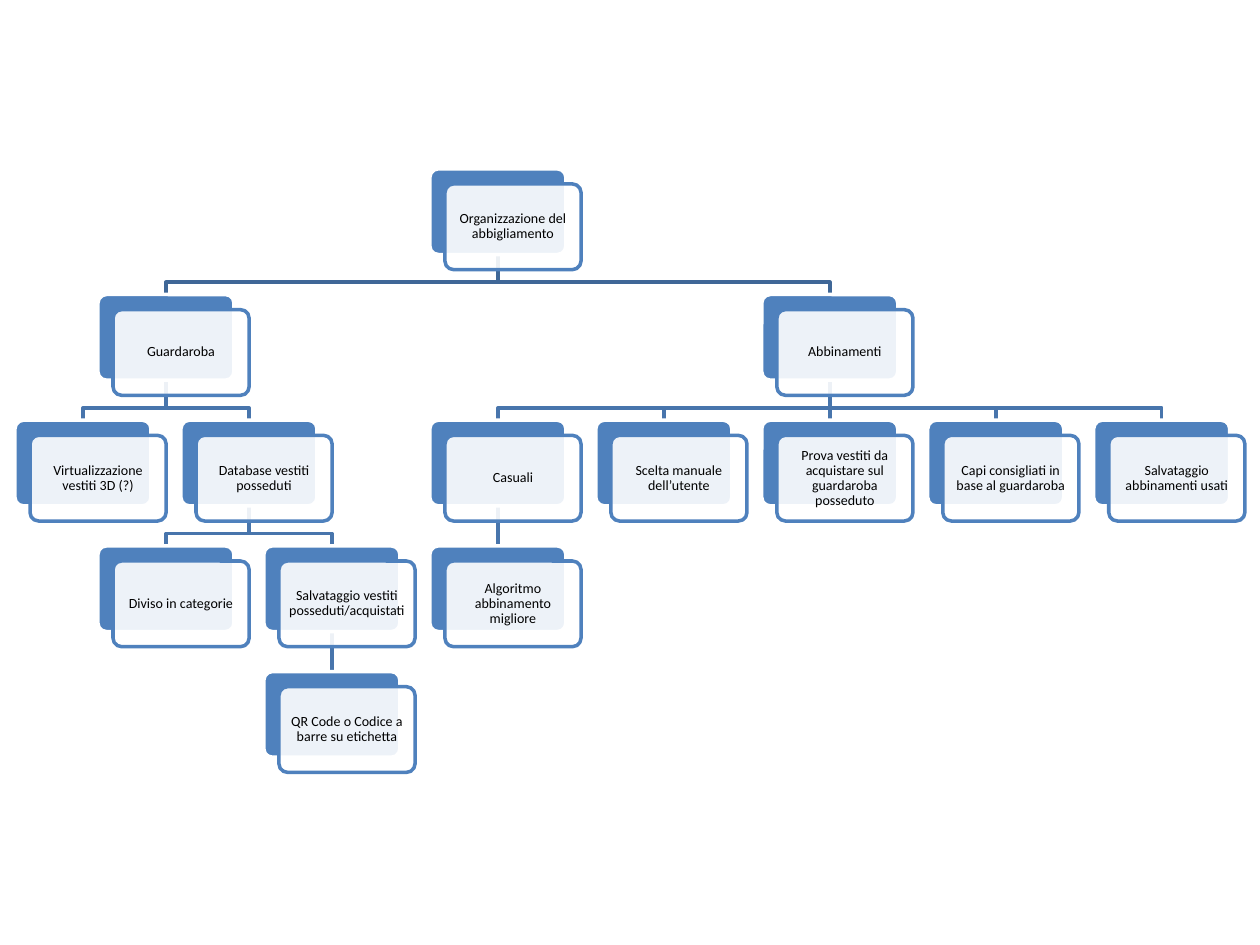
"""Build a wardrobe organisation hierarchy slide."""
from dataclasses import dataclass

from lxml import etree
from pptx import Presentation
from pptx.dml.color import RGBColor
from pptx.enum.shapes import MSO_CONNECTOR, MSO_SHAPE
from pptx.enum.text import MSO_ANCHOR, PP_ALIGN
from pptx.oxml.ns import qn
from pptx.util import Inches, Pt

ROUNDED = MSO_SHAPE.ROUNDED_RECTANGLE
STRAIGHT = MSO_CONNECTOR.STRAIGHT
MIDDLE = MSO_ANCHOR.MIDDLE
CENTER = PP_ALIGN.CENTER

HALF_COLUMN = 9.22 / 14
FIRST_TOP = 1.34
ROW_STEP = 3.99 / 4
CARD_WIDTH = 1.08
CARD_HEIGHT = 0.68
CARD_OFFSET = 0.12
BEND_DROP = 0.22


@dataclass(frozen=True)
class Theme:
    accent: RGBColor = RGBColor(0x4F, 0x81, 0xBD)
    top_link: RGBColor = RGBColor(0x3F, 0x67, 0x97)
    lower_link: RGBColor = RGBColor(0x48, 0x75, 0xAC)
    white: RGBColor = RGBColor(0xFF, 0xFF, 0xFF)
    text: RGBColor = RGBColor(0x00, 0x00, 0x00)
    font: str = "Calibri"
    text_size: Pt = Pt(8)
    line_width: Pt = Pt(2)
    card_opacity: int = 90


@dataclass(frozen=True)
class Node:
    label: str
    column: int
    children: tuple["Node", ...] = ()


THEME = Theme()
FRAME_FORMAT = {
    "word_wrap": True,
    "vertical_anchor": MIDDLE,
    "margin_left": Inches(0.03),
    "margin_right": Inches(0.03),
    "margin_top": Inches(0.03),
    "margin_bottom": Inches(0.03),
}
PARAGRAPH_FORMAT = {"alignment": CENTER, "line_spacing": 0.9, "space_after": Pt(2.8)}
FONT_FORMAT = {"name": THEME.font, "size": THEME.text_size}

HIERARCHY = Node("Organizzazione del abbigliamento", 6, (
    Node("Guardaroba", 2, (
        Node("Virtualizzazione vestiti 3D (?)", 1),
        Node("Database vestiti posseduti", 3, (
            Node("Diviso in categorie", 2),
            Node("Salvataggio vestiti posseduti/acquistati", 4, (
                Node("QR Code o Codice a barre su etichetta", 4),
            )),
        )),
    )),
    Node("Abbinamenti", 10, (
        Node("Casuali", 6, (Node("Algoritmo abbinamento migliore", 6),)),
        Node("Scelta manuale dell’utente", 8),
        Node("Prova vestiti da acquistare sul guardaroba posseduto", 10),
        Node("Capi consigliati in base al guardaroba", 12),
        Node("Salvataggio abbinamenti usati", 14),
    )),
))


def apply_format(target: object, values: dict[str, object]) -> None:
    for name, value in values.items():
        setattr(target, name, value)


def center_of(node: Node) -> float:
    return node.column * HALF_COLUMN


def top_of(level: int) -> float:
    return FIRST_TOP + level * ROW_STEP


def draw_link(slide, parent: Node, child: Node, level: int) -> None:
    start_x, end_x = Inches(center_of(parent)), Inches(center_of(child))
    bottom = top_of(level) + CARD_HEIGHT
    start_y, bend_y = Inches(bottom), Inches(bottom + BEND_DROP)
    end_y = Inches(top_of(level + 1))
    if start_x == end_x:
        link = slide.shapes.add_connector(STRAIGHT, start_x, start_y, end_x, end_y)
        etree.SubElement(link._element.spPr, qn("a:effectLst"))
    else:
        builder = slide.shapes.build_freeform(start_x, start_y)
        corners = [(start_x, bend_y), (end_x, bend_y), (end_x, end_y)]
        builder.add_line_segments(corners, close=False)
        link = builder.convert_to_shape()
        link.fill.background()
        link.shadow.inherit = False
    link.line.color.rgb = THEME.lower_link if level else THEME.top_link
    link.line.width = THEME.line_width


def draw_links(slide, node: Node, level: int = 0) -> None:
    for child in reversed(node.children):
        draw_links(slide, child, level + 1)
        draw_link(slide, node, child, level)


def add_panel(slide, left: float, top: float, fill: RGBColor, line: RGBColor):
    panel = slide.shapes.add_shape(
        ROUNDED, Inches(left), Inches(top), Inches(CARD_WIDTH), Inches(CARD_HEIGHT)
    )
    panel.adjustments[0] = 0.1
    panel.shadow.inherit = False
    panel.fill.solid()
    panel.fill.fore_color.rgb = fill
    panel.line.color.rgb = line
    panel.line.width = THEME.line_width
    return panel


def draw_cards(slide, node: Node, level: int = 0) -> None:
    left, top = center_of(node) - CARD_WIDTH / 2, top_of(level)
    add_panel(slide, left, top, THEME.accent, THEME.white)
    card = add_panel(
        slide, left + CARD_OFFSET, top + CARD_OFFSET, THEME.white, THEME.accent
    )
    color = card._element.spPr.find(qn("a:solidFill")).find(qn("a:srgbClr"))
    etree.SubElement(color, qn("a:alpha"), val=str(THEME.card_opacity * 1000))
    apply_format(card.text_frame, FRAME_FORMAT)
    paragraph = card.text_frame.paragraphs[0]
    apply_format(paragraph, PARAGRAPH_FORMAT)
    run = paragraph.add_run()
    run.text = node.label
    apply_format(run.font, FONT_FORMAT)
    run.font.color.rgb = THEME.text
    for child in node.children:
        draw_cards(slide, child, level + 1)


def main() -> None:
    presentation = Presentation()
    presentation.slide_width = Inches(10)
    presentation.slide_height = Inches(7.5)
    slide = presentation.slides.add_slide(presentation.slide_layouts[6])
    draw_links(slide, HIERARCHY)
    draw_cards(slide, HIERARCHY)
    presentation.save("out.pptx")


if __name__ == "__main__":
    main()
